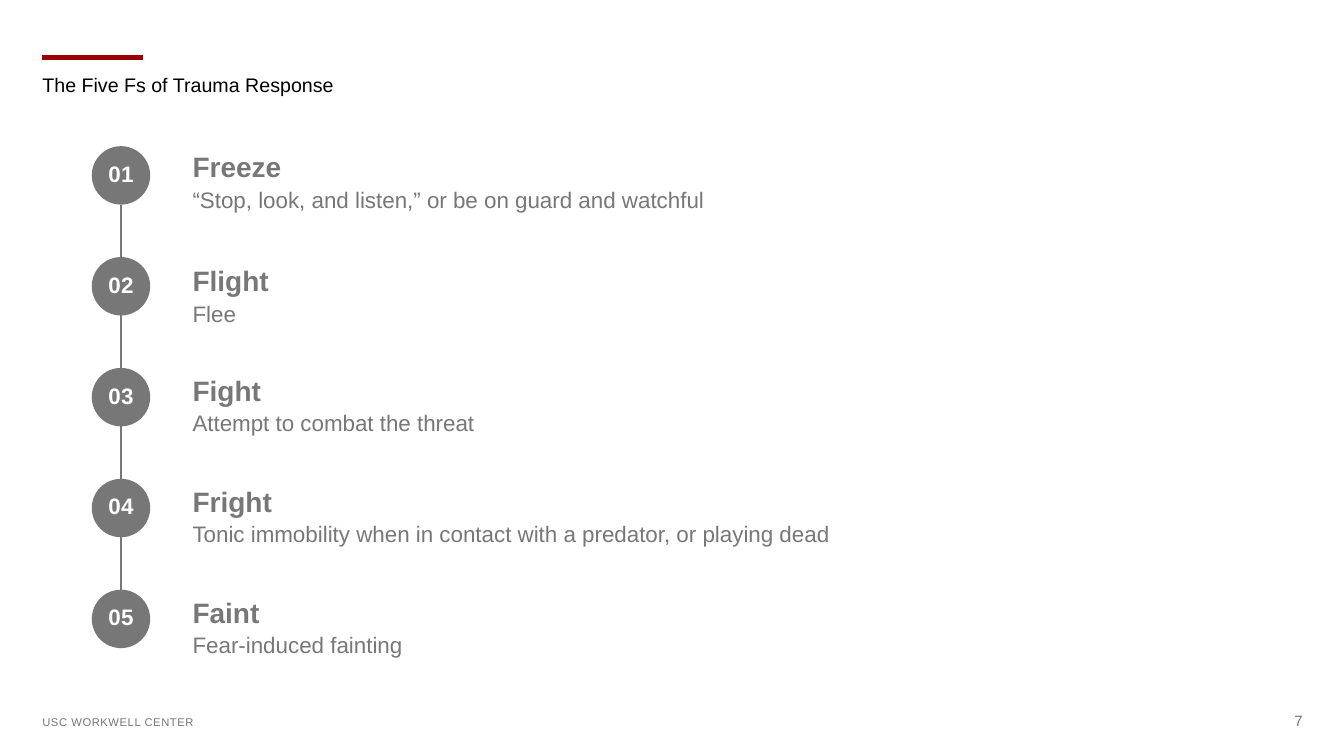
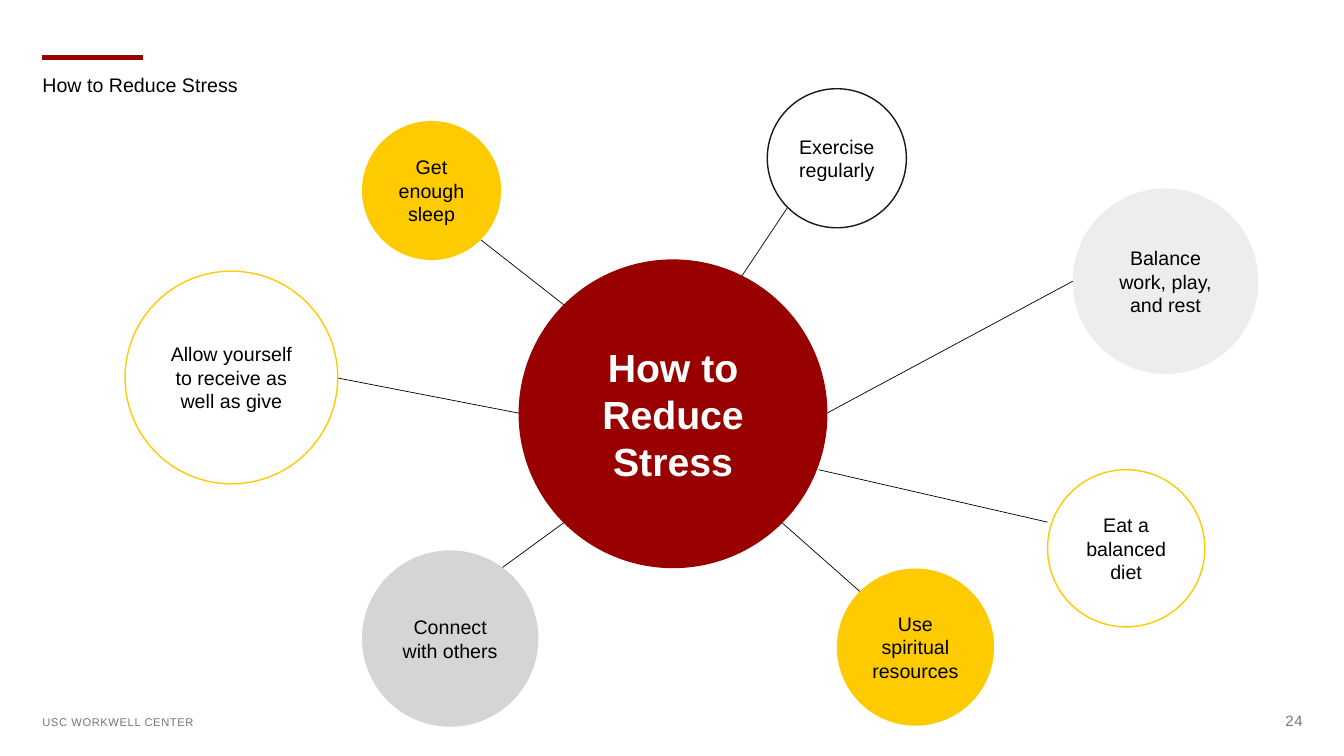
import pptx
import pptx.dml.color
import pptx.enum.shapes
import pptx.enum.text
import pptx.oxml.ns
import pptx.oxml.xmlchemy
import pptx.util

Inches = pptx.util.Inches
Pt = pptx.util.Pt
RGBColor = pptx.dml.color.RGBColor
ALIGN = pptx.enum.text.PP_ALIGN
ANCHOR = pptx.enum.text.MSO_ANCHOR

CARDINAL = RGBColor(0x99, 0x00, 0x00)
GOLD = RGBColor(0xFE, 0xCB, 0x00)
BLACK = RGBColor(0x00, 0x00, 0x00)
NEAR_BLACK = RGBColor(0x18, 0x18, 0x18)
WHITE = RGBColor(0xFF, 0xFF, 0xFF)
STEP_GRAY = RGBColor(0x77, 0x77, 0x77)
FOOTER_GRAY = RGBColor(0x76, 0x76, 0x76)
MID_GRAY = RGBColor(0xD5, 0xD5, 0xD5)
PALE_GRAY = RGBColor(0xED, 0xED, 0xED)

RESPONSES = [
    ("Freeze", "“Stop, look, and listen,” or be on guard and watchful", 1.45),
    ("Flight", "Flee", 2.58),
    ("Fight", "Attempt to combat the threat", 3.67),
    ("Fright", "Tonic immobility when in contact with a predator, or playing dead", 4.77),
    ("Faint", "Fear-induced fainting", 5.87),
]

IDEAS = [
    ("Get enough sleep", 3.59, 1.2, 1.38, GOLD, None),
    ("Allow yourself to receive as well as give", 1.24, 2.69, 2.11, None, GOLD),
    ("Connect with others", 3.59, 5.46, 1.75, MID_GRAY, None),
    ("Exercise regularly", 7.61, 0.88, 1.38, None, NEAR_BLACK),
    ("Balance work, play, and rest", 10.64, 1.87, 1.84, PALE_GRAY, None),
    ("Eat a balanced diet", 10.39, 4.66, 1.56, None, GOLD),
    ("Use spiritual resources", 8.3, 5.64, 1.56, GOLD, None),
]

SPOKES = [
    ((4.77, 2.38), (5.6, 3.03)),
    ((3.35, 3.75), (5.15, 4.1)),
    ((4.97, 5.64), (5.6, 5.18)),
    ((7.81, 2.06), (7.33, 2.78)),
    ((10.64, 2.79), (8.2, 4.1)),
    ((10.39, 5.18), (8.12, 4.66)),
    ((8.53, 5.87), (7.75, 5.18)),
]


class Deck:
    font_name = "Arial"

    def __init__(self):
        self.presentation = pptx.Presentation()
        self.presentation.slide_width = Inches(13.33)
        self.presentation.slide_height = Inches(7.5)
        self.slide = None

    def new_slide(self, title, number):
        layout = self.presentation.slide_layouts[5]
        self.slide = self.presentation.slides.add_slide(layout)
        self.line((0.42, 0.57), (1.42, 0.57), CARDINAL, 4)
        self.text(number, 12.62, 7.06, 0.3, 0.18, 10.7, ALIGN.RIGHT)
        self.text("USC WORKWELL CENTER", 0.42, 7.1, 2.8, 0.13, 8)
        self.title(title)

    def style(self, paragraph, size, color, bold=False, align=ALIGN.LEFT, tracking=0):
        paragraph.alignment = align
        font = paragraph.font
        font.name = self.font_name
        font.size = Pt(size)
        font.bold = bold
        font.color.rgb = color
        if tracking:
            properties = paragraph._p.pPr.find(pptx.oxml.ns.qn("a:defRPr"))
            properties.set("spc", str(round(tracking * 100)))

    def frame(self, shape, anchor, horizontal=0, vertical=0):
        frame = shape.text_frame
        frame.word_wrap = True
        frame.auto_size = pptx.enum.text.MSO_AUTO_SIZE.NONE
        frame.vertical_anchor = anchor
        frame.margin_left = frame.margin_right = Inches(horizontal)
        frame.margin_top = frame.margin_bottom = Inches(vertical)
        return frame

    def title(self, text):
        shape = self.slide.shapes.title
        shape.left, shape.top = Inches(0.42), Inches(0.72)
        shape.width, shape.height = Inches(6.45), Inches(0.56)
        frame = self.frame(shape, ANCHOR.TOP)
        frame.text = text
        self.style(frame.paragraphs[0], 14, BLACK)

    def text_box(self, left, top, width, height):
        shape = self.slide.shapes.add_textbox(
            Inches(left), Inches(top), Inches(width), Inches(height))
        return self.frame(shape, ANCHOR.TOP)

    def text(self, text, left, top, width, height, size, align=ALIGN.LEFT):
        frame = self.text_box(left, top, width, height)
        frame.text = text
        self.style(frame.paragraphs[0], size, FOOTER_GRAY, align=align, tracking=0.4)

    def entry(self, heading, detail, left, top):
        frame = self.text_box(left, top, 7.26, 0.64)
        frame.text = f"{heading}\n{detail}"
        for paragraph, size, bold in zip(frame.paragraphs, (20, 16), (True, False)):
            paragraph.line_spacing = 1.1
            self.style(paragraph, size, STEP_GRAY, bold)

    def line(self, start, end, color, width):
        connector = self.slide.shapes.add_connector(
            pptx.enum.shapes.MSO_CONNECTOR.STRAIGHT,
            *(Inches(value) for value in (*start, *end)))
        connector.line.color.rgb = color
        connector.line.width = Pt(width)
        connector._element.spPr.append(
            pptx.oxml.xmlchemy.OxmlElement("a:effectLst"))

    def circle(self, text, left, top, diameter, fill=None, outline=None, size=14,
               color=BLACK, bold=False, margins=(0.1, 0.05), tracking=0):
        shape = self.slide.shapes.add_shape(
            pptx.enum.shapes.MSO_SHAPE.OVAL, Inches(left), Inches(top),
            Inches(diameter), Inches(diameter))
        shape.shadow.inherit = False
        if fill is None:
            shape.fill.background()
        else:
            shape.fill.solid()
            shape.fill.fore_color.rgb = fill
        if outline is None:
            shape.line.fill.background()
        else:
            shape.line.color.rgb = outline
            shape.line.width = Pt(1)
        frame = self.frame(shape, ANCHOR.MIDDLE, *margins)
        frame.text = text
        self.style(frame.paragraphs[0], size, color, bold, ALIGN.CENTER, tracking)
        return frame


def add_trauma_responses(deck):
    deck.new_slide("The Five Fs of Trauma Response", "7")
    left, first_top, pitch, diameter = 0.91, 1.45, 1.1, 0.58
    center = left + diameter / 2
    for index, (heading, detail, text_top) in enumerate(RESPONSES):
        top = first_top + index * pitch
        deck.entry(heading, detail, 1.91, text_top)
        frame = deck.circle(f"{index + 1:02}", left, top, diameter, STEP_GRAY, size=16,
                            color=WHITE, bold=True, margins=(0, 0), tracking=0.2)
        frame.margin_bottom = Inches(0.04)
        if index:
            deck.line((center, top - pitch + diameter), (center, top), STEP_GRAY, 1)


def add_stress_map(deck):
    deck.new_slide("How to Reduce Stress", "24")
    for start, end in SPOKES:
        deck.line(start, end, BLACK, 0.5)
    for idea in IDEAS:
        deck.circle(*idea)
    deck.circle("How to Reduce Stress", 5.15, 2.58, 3.05, CARDINAL, CARDINAL,
                size=28, color=WHITE, bold=True, margins=(0.04, 0.02))


def main():
    deck = Deck()
    add_trauma_responses(deck)
    add_stress_map(deck)
    deck.presentation.save("out.pptx")


if __name__ == "__main__":
    main()
